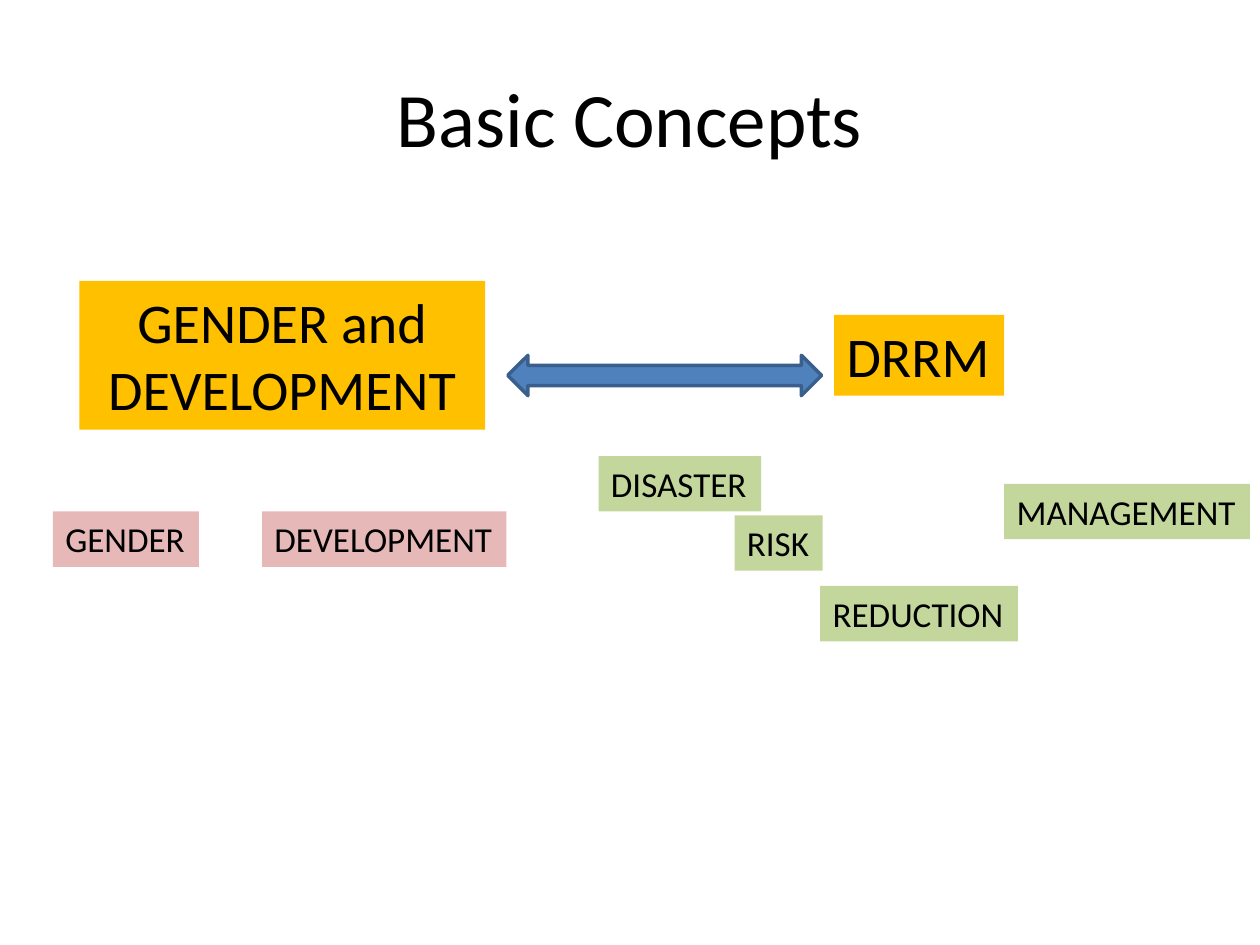
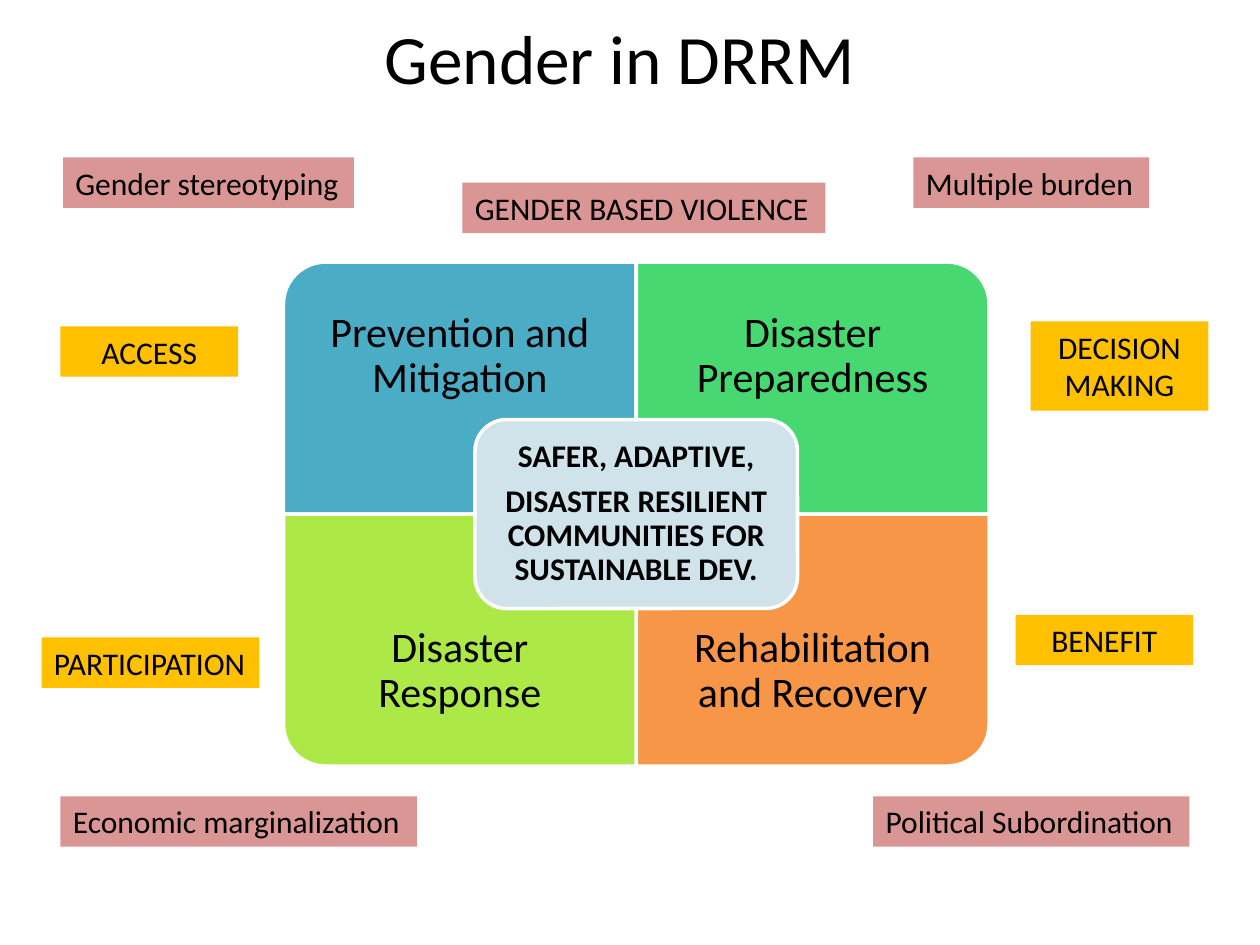
import dataclasses

import pptx
import pptx.dml.color
import pptx.enum.shapes
import pptx.enum.text
import pptx.util

Shapes = pptx.enum.shapes.MSO_SHAPE
Align = pptx.enum.text.PP_ALIGN
Anchor = pptx.enum.text.MSO_ANCHOR

# The grid: 100 columns by 75 rows on a 10 by 7.5 inch slide
SLIDE_WIDTH = pptx.util.Inches(10)
SLIDE_HEIGHT = pptx.util.Inches(7.5)
COLUMN = SLIDE_WIDTH / 100
ROW = SLIDE_HEIGHT / 75


@dataclasses.dataclass(frozen=True)
class Theme:
    font: str = "Calibri"
    ink: str = "000000"
    white: str = "FFFFFF"
    gold: str = "FFC000"
    pink: str = "E6B9B8"
    rose: str = "D99694"
    sage: str = "C3D69B"
    arrow: str = "4F81BD"
    arrow_edge: str = "3A5F8C"
    prevention: str = "4BACC6"
    preparedness: str = "47D872"
    response: str = "ACE946"
    recovery: str = "F79646"
    goal: str = "D0E3EA"
    title_size: float = 44
    compact_title_size: float = 39.6
    heading_size: float = 32
    phase_size: float = 24
    term_size: float = 20
    issue_size: float = 18
    outline: float = 2


THEME = Theme()


@dataclasses.dataclass(frozen=True)
class Area:
    """A place on the grid, in columns and rows."""
    column: float
    row: float
    columns: float
    rows: float

    def lengths(self) -> tuple[int, int, int, int]:
        return (round(self.column * COLUMN), round(self.row * ROW),
                round(self.columns * COLUMN), round(self.rows * ROW))


@dataclasses.dataclass(frozen=True)
class Label:
    """A filled box that fits its text; wrapped ones are centred."""
    text: str
    area: Area
    fill: str
    size: float
    wraps: bool = False


@dataclasses.dataclass(frozen=True)
class Phase:
    """A quarter of the matrix, by its side (0 or 1) across and down."""
    text: str
    across: int
    down: int
    rotation: int
    fill: str


def color(value: str) -> pptx.dml.color.RGBColor:
    return pptx.dml.color.RGBColor.from_string(value)


def write(box, text: str, size: float, align=Align.LEFT, bold: bool = False,
          stacked: bool = False) -> None:
    """Set the text of a box; stacked text has tight lines and a gap after."""
    box.text_frame.text = text
    for para in box.text_frame.paragraphs:
        para.alignment = align
        if stacked:
            para.line_spacing = 0.9
            para.space_after = pptx.util.Pt(0.35 * size)
        for span in para.runs:
            span.font.name = THEME.font
            span.font.size = pptx.util.Pt(size)
            span.font.bold = bold
            span.font.color.rgb = color(THEME.ink)


def set_frame(box, inset: float) -> None:
    """Centre the text vertically, with equal insets given in columns."""
    frame = box.text_frame
    frame.word_wrap = True
    frame.vertical_anchor = Anchor.MIDDLE
    frame.margin_left = frame.margin_right = round(inset * COLUMN)
    frame.margin_top = frame.margin_bottom = round(inset * ROW)


def draw_title(page, text: str, area: Area, size: float) -> None:
    box = page.shapes.add_textbox(*area.lengths())
    set_frame(box, 0.5)
    write(box, text, size, Align.CENTER)


def draw_label(page, label: Label) -> None:
    box = page.shapes.add_textbox(*label.area.lengths())
    box.fill.solid()
    box.fill.fore_color.rgb = color(label.fill)
    box.text_frame.word_wrap = label.wraps
    box.text_frame.auto_size = pptx.enum.text.MSO_AUTO_SIZE.SHAPE_TO_FIT_TEXT
    write(box, label.text, label.size, Align.CENTER if label.wraps else Align.LEFT)


def draw_shape(page, kind, area: Area, fill: str, edge: str):
    shape = page.shapes.add_shape(kind, *area.lengths())
    shape.shadow.inherit = False
    shape.fill.solid()
    shape.fill.fore_color.rgb = color(fill)
    shape.line.color.rgb = color(edge)
    shape.line.width = pptx.util.Pt(THEME.outline)
    return shape


# The four phases meet in the middle of the matrix
MATRIX = Area(22.5, 20.8, 56, 40)
PHASE_TEXT_ROWS = 15
PHASES = (
    Phase("Prevention and Mitigation", 0, 0, 270, THEME.prevention),
    Phase("Disaster Preparedness", 1, 0, 0, THEME.preparedness),
    Phase("Disaster Response", 0, 1, 180, THEME.response),
    Phase("Rehabilitation and Recovery", 1, 1, 90, THEME.recovery),
)
GOAL = "SAFER, ADAPTIVE,\nDISASTER RESILIENT COMMUNITIES FOR SUSTAINABLE DEV."
GOAL_AREA = Area(37.7, 33.3, 25.6, 15)


def draw_phase(page, phase: Phase) -> None:
    """Draw a quarter, turned so that its round corner points outwards."""
    width, height = MATRIX.columns / 2, MATRIX.rows / 2
    left = MATRIX.column + phase.across * width
    top = MATRIX.row + phase.down * height
    area = Area(left, top, width, height)
    if phase.rotation % 180:
        shift = (width - height) / 2
        area = Area(left + shift, top - shift, height, width)
    quarter = draw_shape(page, Shapes.ROUND_1_RECTANGLE, area, phase.fill, THEME.white)
    quarter.rotation = phase.rotation

    text_top = top + phase.down * (height - PHASE_TEXT_ROWS)
    box = page.shapes.add_textbox(*Area(left, text_top, width, PHASE_TEXT_ROWS).lengths())
    set_frame(box, 1.9)
    write(box, phase.text, THEME.phase_size, Align.CENTER, stacked=True)


def term(text: str, column: float, row: float, columns: float, fill: str) -> Label:
    return Label(text, Area(column, row, columns, 4.4), fill, THEME.term_size)


def issue(text: str, column: float, row: float, columns: float) -> Label:
    return Label(text, Area(column, row, columns, 4), THEME.rose, THEME.issue_size)


def factor(text: str, column: float, row: float, columns: float = 14.1,
           rows: float = 4, wraps: bool = True) -> Label:
    return Label(text, Area(column, row, columns, rows), THEME.gold,
                 THEME.issue_size, wraps)


CONCEPT_LABELS = (
    term("GENDER", 4.2, 40.6, 11.6, THEME.pink),
    term("DEVELOPMENT", 20.8, 40.6, 19.4, THEME.pink),
    term("DISASTER", 47.5, 36.2, 12.9, THEME.sage),
    term("RISK", 58.3, 40.9, 7, THEME.sage),
    term("REDUCTION", 65.1, 46.5, 15.7, THEME.sage),
    Label("GENDER and DEVELOPMENT", Area(6.3, 22.3, 32.2, 11.8), THEME.gold,
          THEME.heading_size, wraps=True),
    Label("DRRM", Area(66.2, 25, 13.5, 6.4), THEME.gold, THEME.heading_size),
    term("MANAGEMENT", 79.7, 38.4, 19.5, THEME.sage),
)

GENDER_LABELS = (
    issue("Gender stereotyping", 5, 12.5, 23.1),
    issue("Multiple burden", 72.5, 12.5, 18.7),
    issue("Economic marginalization", 4.8, 63.2, 28.3),
    issue("Political Subordination", 69.3, 63.2, 25.1),
    issue("GENDER BASED VIOLENCE", 36.7, 14.5, 28.8),
    factor("ACCESS", 4.8, 25.9),
    factor("PARTICIPATION", 3.3, 50.6, columns=17.3, wraps=False),
    factor("DECISION MAKING", 81.8, 25.5, rows=7.1),
    factor("BENEFIT", 80.6, 48.8),
)


def build_concepts(page) -> None:
    draw_title(page, "Basic Concepts", Area(5, 3, 90, 12.5), THEME.title_size)
    for label in CONCEPT_LABELS:
        draw_label(page, label)
    draw_shape(page, Shapes.LEFT_RIGHT_ARROW, Area(40.3, 28.2, 24.9, 3.2),
               THEME.arrow, THEME.arrow_edge)


def build_gender(page) -> None:
    draw_title(page, "Gender in DRRM", Area(4.2, 1, 90, 7), THEME.compact_title_size)
    for phase in PHASES:
        draw_phase(page, phase)
    goal = draw_shape(page, Shapes.ROUNDED_RECTANGLE, GOAL_AREA, THEME.goal, THEME.white)
    set_frame(goal, 0.7)
    write(goal, GOAL, THEME.issue_size, Align.CENTER, bold=True, stacked=True)
    for label in GENDER_LABELS:
        draw_label(page, label)


def main() -> None:
    deck = pptx.Presentation()
    deck.slide_width, deck.slide_height = SLIDE_WIDTH, SLIDE_HEIGHT
    blank = deck.slide_layouts[6]
    for build in (build_concepts, build_gender):
        build(deck.slides.add_slide(blank))
    deck.save("out.pptx")


if __name__ == "__main__":
    main()
